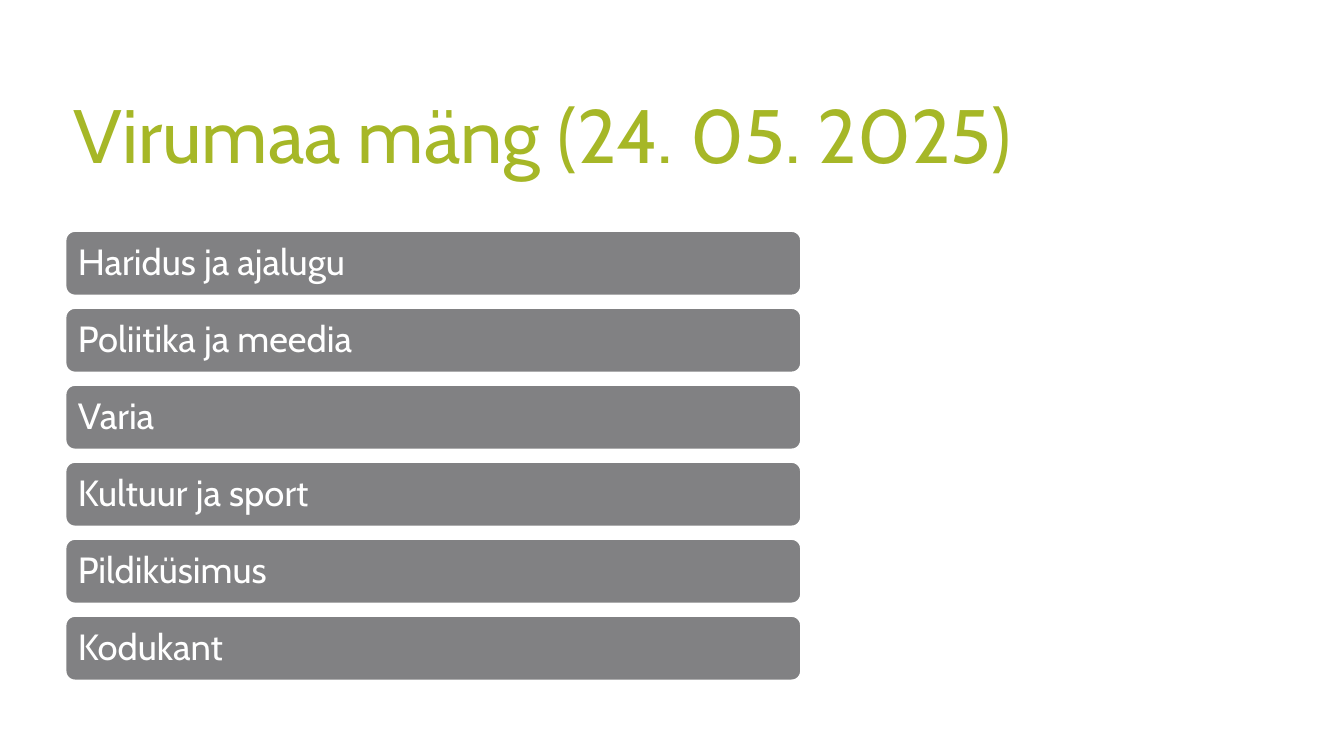
from pptx import Presentation
from pptx.dml.color import RGBColor
from pptx.enum.shapes import MSO_SHAPE as SHAPE
from pptx.enum.text import MSO_ANCHOR as ANCHOR, PP_ALIGN as ALIGN
from pptx.util import Cm, Pt

FONT = "Cabin"
GREEN, GRAY, WHITE = "A6B727", "818183", "FFFFFF"
TOPICS = [
    "Haridus ja ajalugu",
    "Poliitika ja meedia",
    "Varia",
    "Kultuur ja sport",
    "Pildiküsimus",
    "Kodukant",
]


def rgb(color):
    return RGBColor.from_string(color)


def write(sp, text, *, size, color, anchor, inset=None):
    tf = sp.text_frame
    tf.word_wrap = True
    tf.vertical_anchor = anchor
    if inset is not None:
        tf.margin_left = tf.margin_right = inset
        tf.margin_top = tf.margin_bottom = inset
    p = tf.paragraphs[0]
    p.alignment = ALIGN.LEFT
    p.line_spacing = 0.9
    r = p.add_run()
    r.text = text
    r.font.name = FONT
    r.font.size = Pt(size)
    r.font.color.rgb = rgb(color)


def add_title(s, text, left, top, width, height):
    sp = s.shapes.add_textbox(left, top, width, height)
    write(sp, text, size=54, color=GREEN, anchor=ANCHOR.BOTTOM)


def add_topic_bars(s, topics, left, top, width, height, gap):
    """Stack one bar per topic evenly within the given box."""
    bar_height = (height - gap * (len(topics) - 1)) / len(topics)
    for i, topic in enumerate(topics):
        y = top + i * (bar_height + gap)
        sp = s.shapes.add_shape(SHAPE.ROUNDED_RECTANGLE,
                                left, int(y), width, int(bar_height))
        sp.shadow.inherit = False
        sp.fill.solid()
        sp.fill.fore_color.rgb = rgb(GRAY)
        sp.line.color.rgb = rgb(WHITE)
        sp.line.width = Pt(4.25)
        write(sp, topic, size=26, color=WHITE, anchor=ANCHOR.MIDDLE,
              inset=Cm(0.28))


def main():
    prs = Presentation()
    prs.slide_width, prs.slide_height = Cm(33.87), Cm(19.05)
    s = prs.slides.add_slide(prs.slide_layouts[6])
    left = Cm(1.6)
    add_title(s, "Virumaa mäng (24. 05. 2025)",
              left, Cm(0.66), Cm(30.6), Cm(3.99))
    add_topic_bars(s, TOPICS, left, Cm(5.77), Cm(18.64), Cm(11.43),
                   gap=Cm(0.21))
    prs.save("out.pptx")


if __name__ == "__main__":
    main()
